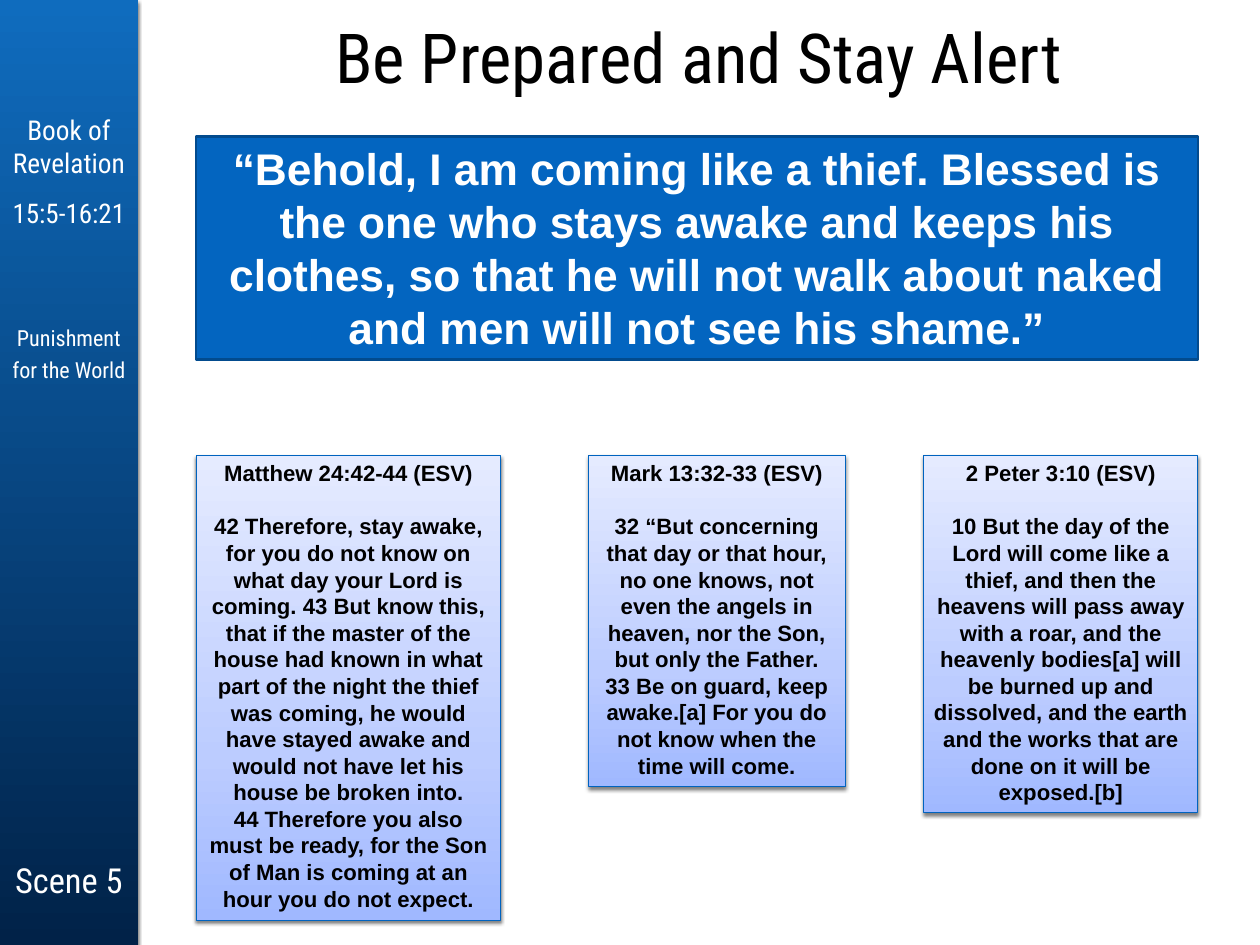
from dataclasses import dataclass

from lxml import etree
from pptx import Presentation
from pptx.dml.color import RGBColor
from pptx.enum.shapes import MSO_SHAPE
from pptx.enum.text import MSO_ANCHOR, MSO_AUTO_SIZE, PP_ALIGN
from pptx.oxml.ns import qn
from pptx.util import Pt

RECT = MSO_SHAPE.RECTANGLE
TOP, MIDDLE = MSO_ANCHOR.TOP, MSO_ANCHOR.MIDDLE
CENTER = PP_ALIGN.CENTER
NO_FIT = MSO_AUTO_SIZE.NONE

SLIDE_W, SLIDE_H = 1024, 768
SIDEBAR_W = 112
CARD_TOP = 370
CARD_GAP = 21.6
HEADING_FONT, BODY_FONT = "Roboto Condensed", "Arial"
WHITE, BLACK = "FFFFFF", "000000"
SIDEBAR_STOPS = [(0, "0F6CBE"), (100, "012248")]
CARD_STOPS = [(0, "A0B8FF"), (35, "BCCCFF"), (100, "E5EBFF")]
NO_BREAK_SPACE = chr(160)


@dataclass
class SideLabel:
    text: str
    top: float
    height: float
    size: float
    inset: float = 0
    spacing: float = 1.0


@dataclass
class Verse:
    number: int
    text: str


@dataclass
class VerseCard:
    left: float
    width: float
    height: float
    reference: str
    verses: list[Verse]


SIDE_LABELS = [
    SideLabel("Book of Revelation", 90.4, 56.9, 22.2),
    SideLabel("Scene 5", 679.7, 69.8, 28),
    SideLabel("15:5-16:21", 144.7, 56.9, 22),
    SideLabel("Punishment for the World", 255.6, 59.8, 18, 4.3, 1.2),
]
QUOTE = (
    "“Behold, I am coming like a thief. Blessed is the one who stays awake and keeps "
    "his clothes, so that he will not walk about naked and men will not see his shame.”"
)
VERSE_CARDS = [
    VerseCard(159.4, 247.5, 378, "Matthew 24:42-44 (ESV)", [
        Verse(42, "Therefore, stay awake, for you do not know on what day your Lord is "
                  "coming."),
        Verse(43, "But know this, that if the master of the house had known in what part "
                  "of the night the thief was coming, he would have stayed awake and "
                  "would not have let his house be broken into."),
        Verse(44, "Therefore you also must be ready, for the Son of Man is coming at an "
                  "hour you do not expect."),
    ]),
    VerseCard(478.1, 208.8, 269.3, "Mark 13:32-33 (ESV)", [
        Verse(32, "“But concerning that day or that hour, no one knows, not even the "
                  "angels in heaven, nor the Son, but only the Father."),
        Verse(33, "Be on guard, keep awake.[a] For you do not know when the time will "
                  "come."),
    ]),
    VerseCard(750.6, 222.9, 290.5, "2 Peter 3:10 (ESV)", [
        Verse(10, "But the day of the Lord will come like a thief, and then the heavens "
                  "will pass away with a roar, and the heavenly bodies[a] will be burned "
                  "up and dissolved, and the earth and the works that are done on it "
                  "will be exposed.[b]"),
    ]),
]


def rgb(value: str) -> RGBColor:
    return RGBColor.from_string(value)


def set_gradient(sp, stops: list[tuple[int, str]], angle: int) -> None:
    """Fill with the stops; the angle runs counter-clockwise from left to right."""
    sp.fill.gradient()
    sp.fill.gradient_angle = angle
    stop_list = sp._element.spPr.find(qn("a:gradFill")).find(qn("a:gsLst"))
    for old in list(stop_list):
        stop_list.remove(old)
    for position, color in stops:
        gs = etree.SubElement(stop_list, qn("a:gs"), pos=str(position * 1000))
        etree.SubElement(gs, qn("a:srgbClr"), val=color)


def add_shadow(sp) -> None:
    effects = sp._element.spPr.find(qn("a:effectLst"))
    shadow = etree.SubElement(
        effects, qn("a:outerShdw"), blurRad=str(Pt(3)), dist=str(Pt(2)),
        dir="5400000", rotWithShape="0",
    )
    color = etree.SubElement(shadow, qn("a:srgbClr"), val=BLACK)
    etree.SubElement(color, qn("a:alpha"), val="50000")


def add_rect(s, left: float, top: float, width: float, height: float):
    sp = s.shapes.add_shape(RECT, Pt(left), Pt(top), Pt(width), Pt(height))
    sp.shadow.inherit = False
    return sp


def set_line(sp, color: str, width: float) -> None:
    sp.line.color.rgb = rgb(color)
    sp.line.width = Pt(width)


def set_frame(tf, anchor: MSO_ANCHOR, inset_x: float, inset_y: float) -> None:
    tf.word_wrap = True
    tf.auto_size = NO_FIT
    tf.vertical_anchor = anchor
    tf.margin_left = tf.margin_right = Pt(inset_x)
    tf.margin_top = tf.margin_bottom = Pt(inset_y)


def write(p, text: str, size: float, font: str, color: str,
          bold: bool = False, spacing: float = 1.0) -> None:
    p.alignment = CENTER
    p.line_spacing = spacing
    r = p.add_run()
    r.text = text
    r.font.size = Pt(size)
    r.font.name = font
    r.font.bold = bold
    r.font.color.rgb = rgb(color)


def add_sidebar(s) -> None:
    sp = add_rect(s, 0, 0, SIDEBAR_W, SLIDE_H)
    set_gradient(sp, SIDEBAR_STOPS, 270)
    sp.line.fill.background()
    add_shadow(sp)
    for label in SIDE_LABELS:
        box = s.shapes.add_textbox(0, Pt(label.top), Pt(SIDEBAR_W), Pt(label.height))
        set_frame(box.text_frame, MIDDLE, label.inset, label.inset)
        write(box.text_frame.paragraphs[0], label.text, label.size,
              HEADING_FONT, WHITE, spacing=label.spacing)


def add_title(s) -> None:
    title = s.shapes.title
    title.left, title.top = Pt(SIDEBAR_W), Pt(10.5)
    title.width, title.height = Pt(SLIDE_W - SIDEBAR_W), Pt(70)
    set_frame(title.text_frame, MIDDLE, 0, 0)
    write(title.text_frame.paragraphs[0], "Be Prepared and Stay Alert", 56,
          HEADING_FONT, BLACK)


def add_quote(s) -> None:
    sp = add_rect(s, 159.1, 110.9, 814.4, 181.4)
    sp.fill.solid()
    sp.fill.fore_color.rgb = rgb("0365C0")
    set_line(sp, "024B8E", 2)
    set_frame(sp.text_frame, TOP, 7.2, 3.6)
    write(sp.text_frame.paragraphs[0], QUOTE, 36, BODY_FONT, WHITE, True)


def add_verse_card(s, card: VerseCard) -> None:
    sp = add_rect(s, card.left, CARD_TOP, card.width, card.height)
    set_gradient(sp, CARD_STOPS, 90)
    set_line(sp, "0063BF", 0.75)
    add_shadow(sp)
    tf = sp.text_frame
    set_frame(tf, TOP, 7.2, 3.6)
    write(tf.paragraphs[0], card.reference, 18, BODY_FONT, BLACK, True)
    p = tf.add_paragraph()
    p.space_before = Pt(CARD_GAP)
    passage = " ".join(f"{v.number}{NO_BREAK_SPACE}{v.text}" for v in card.verses)
    write(p, passage, 18, BODY_FONT, BLACK, True)


def main() -> None:
    prs = Presentation()
    prs.slide_width, prs.slide_height = Pt(SLIDE_W), Pt(SLIDE_H)
    s = prs.slides.add_slide(prs.slide_layouts[5])
    add_sidebar(s)
    add_title(s)
    add_quote(s)
    for card in VERSE_CARDS:
        add_verse_card(s, card)
    prs.save("out.pptx")


if __name__ == "__main__":
    main()
